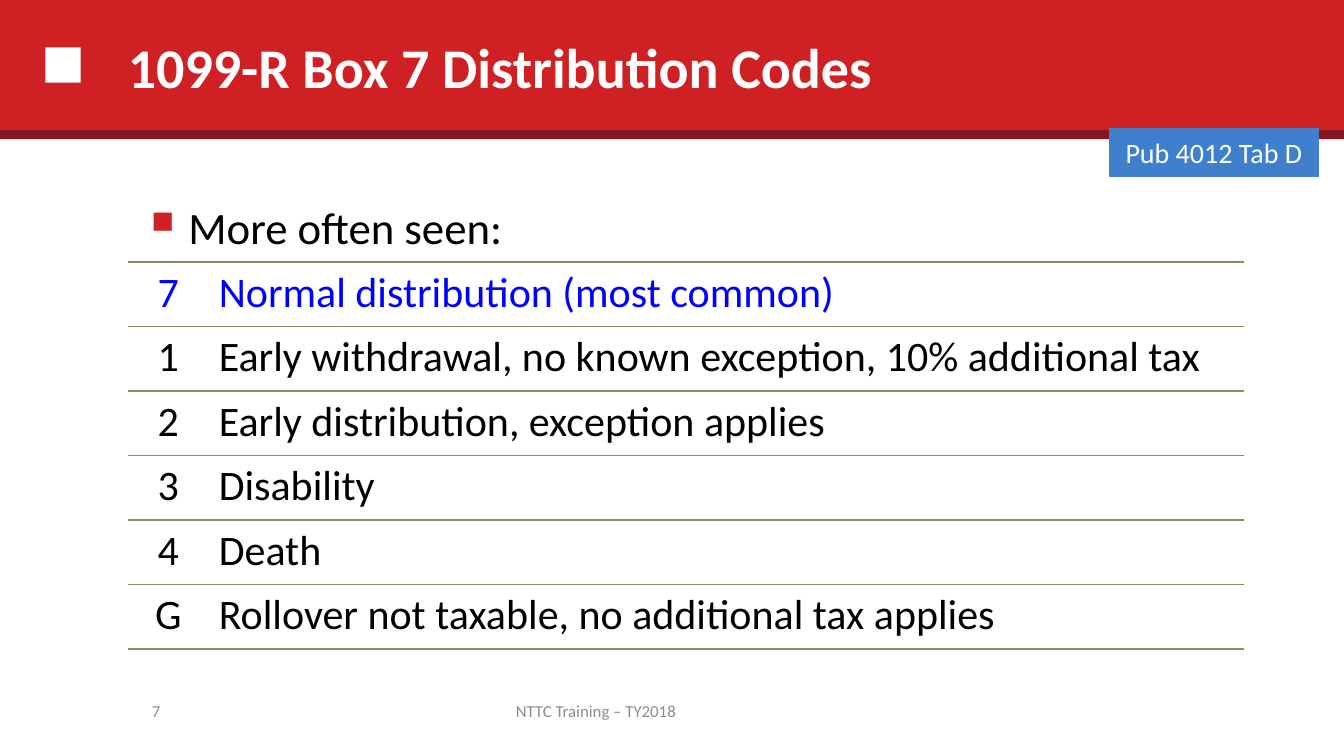
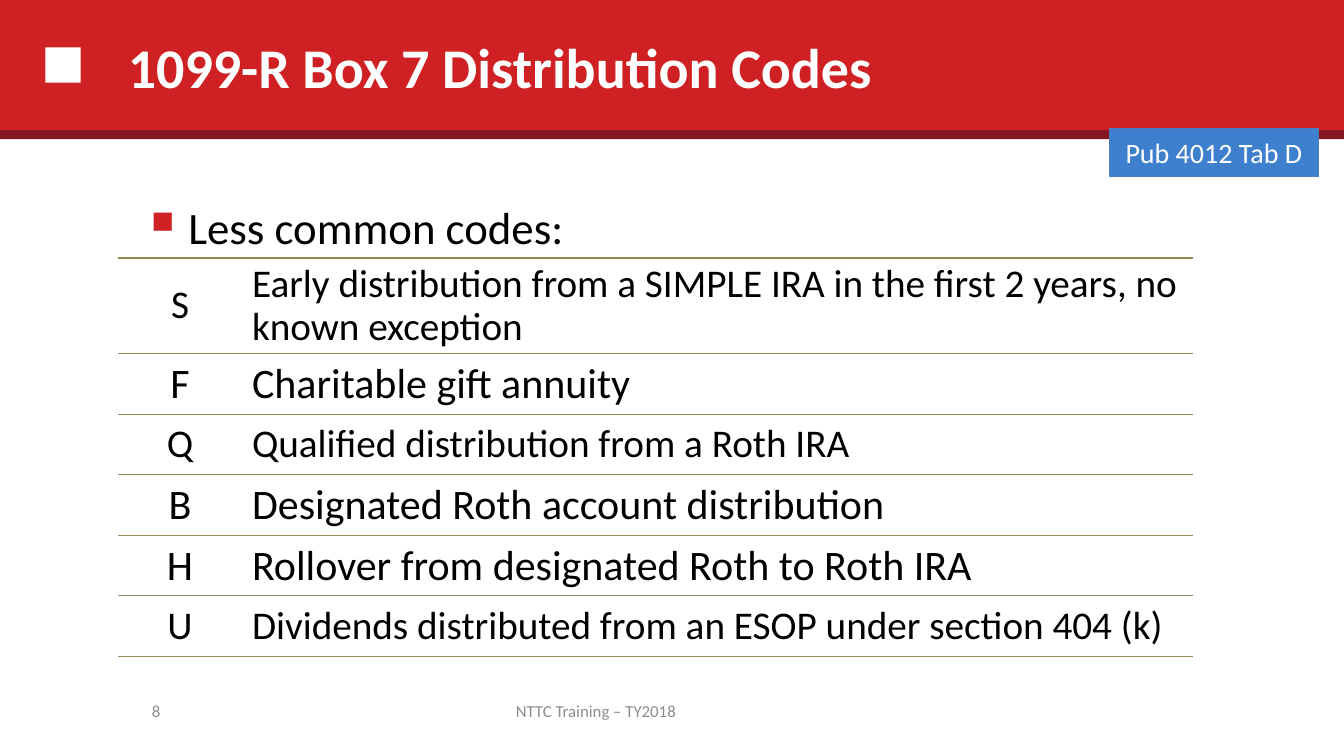
from lxml.etree import SubElement
from pptx import Presentation
from pptx.dml.color import RGBColor
from pptx.enum.shapes import MSO_SHAPE as Shape
from pptx.enum.text import MSO_ANCHOR as Anchor, PP_ALIGN as Align
from pptx.oxml.ns import qn
from pptx.util import Pt

PX = 9144  # 100 px to the inch
FONT = "Calibri"
RED, DARK_RED, WHITE, BLACK = "CF2124", "841721", "FFFFFF", "000000"
BLUE, BLUE_EDGE, CODE_BLUE = "3F80CE", "4B7EBC", "0000FF"
GRAY, RULE = "8C8C8C", "948A54"

color = RGBColor.from_string


def write(frame, text, size, hue, align=Align.LEFT, bold=False):
    frame.text = text
    frame.word_wrap = True
    paragraph = frame.paragraphs[0]
    paragraph.alignment = align
    font = paragraph.runs[0].font
    font.name, font.size, font.bold = FONT, Pt(size), bold
    font.color.rgb = color(hue)
    return paragraph


# Shared parts: bands are (box, fill), labels are (box, size, colour, align, bold)
BANDS = [
    ((0, -1, 1333, 133), RED),
    ((45, 47, 35, 35), WHITE),
    ((0, 129, 1333, 9), DARK_RED),
]
TITLE = ((117, 3, 1066, 125), 40, WHITE, Align.LEFT, True)
FOOTER = ((380, 685, 422, 40), 12, GRAY, Align.CENTER, False)
NUMBER = ((67, 685, 102, 40), 12, GRAY, Align.RIGHT, False)

# Rows are (code, meaning, size, colour)
pages = [
    {
        "number": "7",
        "lead": "More often seen:",
        "corner": (127, 260),
        "columns": (80, 1027),
        "heights": [64] * 6,
        "rows": [
            ("7", "Normal distribution (most common)", 30, CODE_BLUE),
            ("1", "Early withdrawal, no known exception, 10% additional tax", 30, BLACK),
            ("2", "Early distribution, exception applies", 30, BLACK),
            ("3", "Disability", 30, BLACK),
            ("4", "Death", 30, BLACK),
            ("G", "Rollover not taxable, no additional tax applies", 30, BLACK),
        ],
    },
    {
        "number": "8",
        "lead": "Less common codes:",
        "corner": (117, 256),
        "columns": (123, 943),
        "heights": [95] + [60] * 5,
        "rows": [
            ("S", "Early distribution from a SIMPLE IRA in the first 2 years, "
                  "no known exception", 28, BLACK),
            ("F", "Charitable gift annuity", 30, BLACK),
            ("Q", "Qualified distribution from a Roth IRA", 28, BLACK),
            ("B", "Designated Roth account distribution", 30, BLACK),
            ("H", "Rollover from designated Roth to Roth IRA", 30, BLACK),
            ("U", "Dividends distributed from an ESOP under section 404 (k)", 28, BLACK),
        ],
    },
]

presentation = Presentation()
presentation.slide_width = 1333 * PX
presentation.slide_height = 750 * PX

for page in pages:
    slide = presentation.slides.add_slide(presentation.slide_layouts[6])

    # Header bands
    for box, fill in BANDS:
        band = slide.shapes.add_shape(Shape.RECTANGLE, *[n * PX for n in box])
        band.shadow.inherit = False
        band.fill.solid()
        band.fill.fore_color.rgb = color(fill)
        band.line.fill.background()

    # Title, footer and slide number
    for text, (box, *style) in [
        ("1099-R Box 7 Distribution Codes", TITLE),
        ("NTTC Training – TY2018", FOOTER),
        (page["number"], NUMBER),
    ]:
        label = slide.shapes.add_textbox(*[n * PX for n in box])
        write(label.text_frame, text, *style)
        label.text_frame.vertical_anchor = Anchor.MIDDLE

    # Bulleted lead line
    lead = slide.shapes.add_textbox(140 * PX, 193 * PX, 1067 * PX, 64 * PX)
    properties = write(lead.text_frame, page["lead"], 32, BLACK)._p.get_or_add_pPr()
    properties.set("marL", str(37 * PX))
    properties.set("indent", str(-37 * PX))
    bullet_color = SubElement(properties, qn("a:buClr"))
    SubElement(bullet_color, qn("a:srgbClr"), val=RED)
    SubElement(properties, qn("a:buSzPct"), val="70000")
    SubElement(properties, qn("a:buChar"), char="■")

    # Code table with horizontal rules only
    left, top = page["corner"]
    columns, heights = page["columns"], page["heights"]
    table = slide.shapes.add_table(
        len(heights), len(columns),
        left * PX, top * PX, sum(columns) * PX, sum(heights) * PX,
    ).table
    table.first_row = table.horz_banding = False
    for column, width in zip(table.columns, columns):
        column.width = width * PX
    for row, height, (code, meaning, size, hue) in zip(table.rows, heights, page["rows"]):
        row.height = height * PX
        for cell, text, align in zip(row.cells, (code, meaning), (Align.CENTER, Align.LEFT)):
            paragraph = write(cell.text_frame, text, size, hue, align)
            if size == 28:
                paragraph.line_spacing = 0.9
                cell.vertical_anchor = Anchor.MIDDLE
            cell_properties = cell._tc.get_or_add_tcPr()
            for side in ("lnL", "lnR"):
                edge = SubElement(cell_properties, qn(f"a:{side}"))
                SubElement(edge, qn("a:noFill"))
            for side in ("lnT", "lnB"):
                edge = SubElement(cell_properties, qn(f"a:{side}"), w=str(Pt(1)))
                edge_fill = SubElement(edge, qn("a:solidFill"))
                SubElement(edge_fill, qn("a:srgbClr"), val=RULE)
            cell.fill.background()

    # Reference tag
    tag = slide.shapes.add_shape(Shape.RECTANGLE, 1100 * PX, 128 * PX, 208 * PX, 47 * PX)
    tag.shadow.inherit = False
    tag.fill.solid()
    tag.fill.fore_color.rgb = color(BLUE)
    tag.line.color.rgb = color(BLUE_EDGE)
    tag.line.width = Pt(0.75)
    write(tag.text_frame, "Pub 4012 Tab D", 20, WHITE, Align.CENTER)
    tag.text_frame.vertical_anchor = Anchor.MIDDLE

presentation.save("out.pptx")
